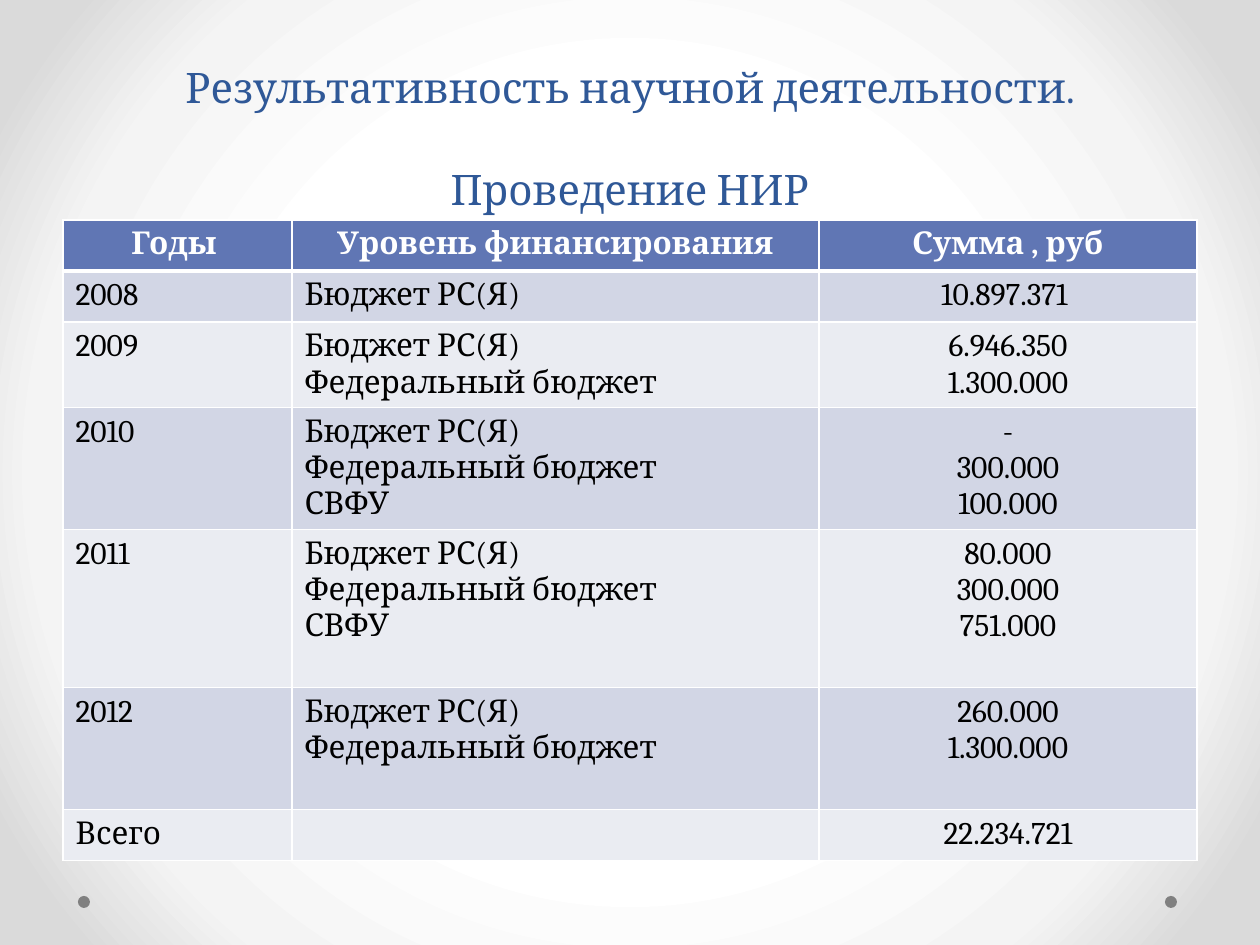
from lxml.etree import SubElement as Sub
from pptx import Presentation
from pptx.dml.color import RGBColor as RGB
from pptx.enum.shapes import MSO_SHAPE as Kind
from pptx.enum.text import MSO_ANCHOR as Anchor, MSO_AUTO_SIZE as Auto, PP_ALIGN as Align
from pptx.oxml.ns import qn
from pptx.util import Emu, Pt

PX = 914400 / 126
FONT = "Cambria"
HUES = {"title": "2F5897", "head": "6076B4", "odd": "D2D6E5", "even": "EAECF2",
        "dot": "808080", "white": "FFFFFF", "black": "000000"}
GLOW = [(0, "FFFFFF"), (50, "FFFFFF"), (76, "F4F4F4"), (92, "DADADA"), (100, "DADADA")]

RS, FED, UNI = "Бюджет РС(Я)", "Федеральный бюджет", "СВФУ"
HEAD = ["Годы ", "Уровень финансирования", "Сумма , руб"]
# Height in px, year, funding sources, sums
ROWS = [
    (51, "2008", [RS], ["10.897.371 "]),
    (85, "2009", [RS, FED], ["6.946.350", "1.300.000"]),
    (122, "2010", [RS, FED, UNI], ["-", "300.000", "100.000"]),
    (158, "2011", [RS, FED, UNI], ["80.000", "300.000", "751.000"]),
    (122, "2012", [RS, FED], ["260.000", "1.300.000"]),
    (51, "Всего", [], ["22.234.721"]),
]
COLS = [229, 527, 378]


def px(n):
    return Emu(round(n * PX))


def hue(name):
    return RGB.from_string(HUES[name])


def add_run(para, text, size, color, bold=False):
    run = para.add_run()
    run.text = text
    font = run.font
    font.name, font.size, font.bold = FONT, Pt(size), bold
    font.color.rgb = hue(color)


def set_glow(slide):
    """Round gradient from the slide centre."""
    fill = slide.background.fill
    fill.solid()
    prop = slide.element.find(".//" + qn("p:bgPr"))
    prop.remove(prop.find(qn("a:solidFill")))
    grad = prop.makeelement(qn("a:gradFill"), {"rotWithShape": "1"})
    prop.insert(0, grad)
    stops = Sub(grad, qn("a:gsLst"))
    for pos, color in GLOW:
        stop = Sub(stops, qn("a:gs"), pos=str(pos * 1000))
        Sub(stop, qn("a:srgbClr"), val=color)
    ring = Sub(grad, qn("a:path"), {"path": "circle"})
    Sub(ring, qn("a:fillToRect"), {side: "50000" for side in "ltrb"})


def add_dot(slide, left):
    dot = slide.shapes.add_shape(Kind.OVAL, px(left), px(896), px(12), px(12))
    dot.shadow.inherit = False
    dot.fill.solid()
    dot.fill.fore_color.rgb = hue("dot")
    dot.line.fill.background()


def set_title(slide, lines):
    title = slide.shapes.title
    title.left, title.top, title.width, title.height = px(63), px(0), px(1134), px(220)
    frame = title.text_frame
    frame.word_wrap, frame.auto_size = True, Auto.NONE
    frame.vertical_anchor = Anchor.BOTTOM
    para = frame.paragraphs[0]
    para.alignment, para.line_spacing = Align.CENTER, Pt(58)
    for i, line in enumerate(lines):
        if i:
            para.add_line_break()
        add_run(para, line, 24, "title")


def set_edges(cell, top, bottom):
    prop = cell._tc.get_or_add_tcPr()
    for side, width in zip("LRTB", (1, 1, top, bottom)):
        line = Sub(prop, qn("a:ln" + side), w=str(Pt(width)))
        Sub(Sub(line, qn("a:solidFill")), qn("a:srgbClr"), val=HUES["white"])


def set_cell(cell, lines, fill, color, align, bold):
    cell.fill.solid()
    cell.fill.fore_color.rgb = hue(fill)
    frame = cell.text_frame
    for i, line in enumerate(lines):
        para = frame.add_paragraph() if i else frame.paragraphs[0]
        para.alignment = align
        add_run(para, line, 18, color, bold)


def add_grid(slide):
    rows = [(51, *([name] for name in HEAD))]
    rows += [(high, [year], kinds, sums) for high, year, kinds, sums in ROWS]
    total = sum(row[0] for row in rows)
    grid = slide.shapes.add_table(len(rows), len(COLS), px(63), px(220),
                                  px(sum(COLS)), px(total)).table
    grid.horz_banding = False
    for col, width in zip(grid.columns, COLS):
        col.width = px(width)
    for r, (high, *cells) in enumerate(rows):
        grid.rows[r].height = px(high)
        head = r == 0
        fill = "head" if head else ("even", "odd")[r % 2]
        for c, lines in enumerate(cells):
            cell = grid.cell(r, c)
            # Thick rule between header and body
            set_edges(cell, 3 if r == 1 else 1, 3 if head else 1)
            align = Align.CENTER if head or c == 2 else Align.LEFT
            set_cell(cell, lines, fill, "white" if head else "black", align, head)


def main():
    deck = Presentation()
    deck.slide_width, deck.slide_height = px(1260), px(945)
    slide = deck.slides.add_slide(deck.slide_layouts[5])
    set_glow(slide)
    # Corner dots
    for left in (1165, 78):
        add_dot(slide, left)
    set_title(slide, ["Результативность научной деятельности.", "Проведение НИР"])
    add_grid(slide)
    deck.save("out.pptx")


if __name__ == "__main__":
    main()
